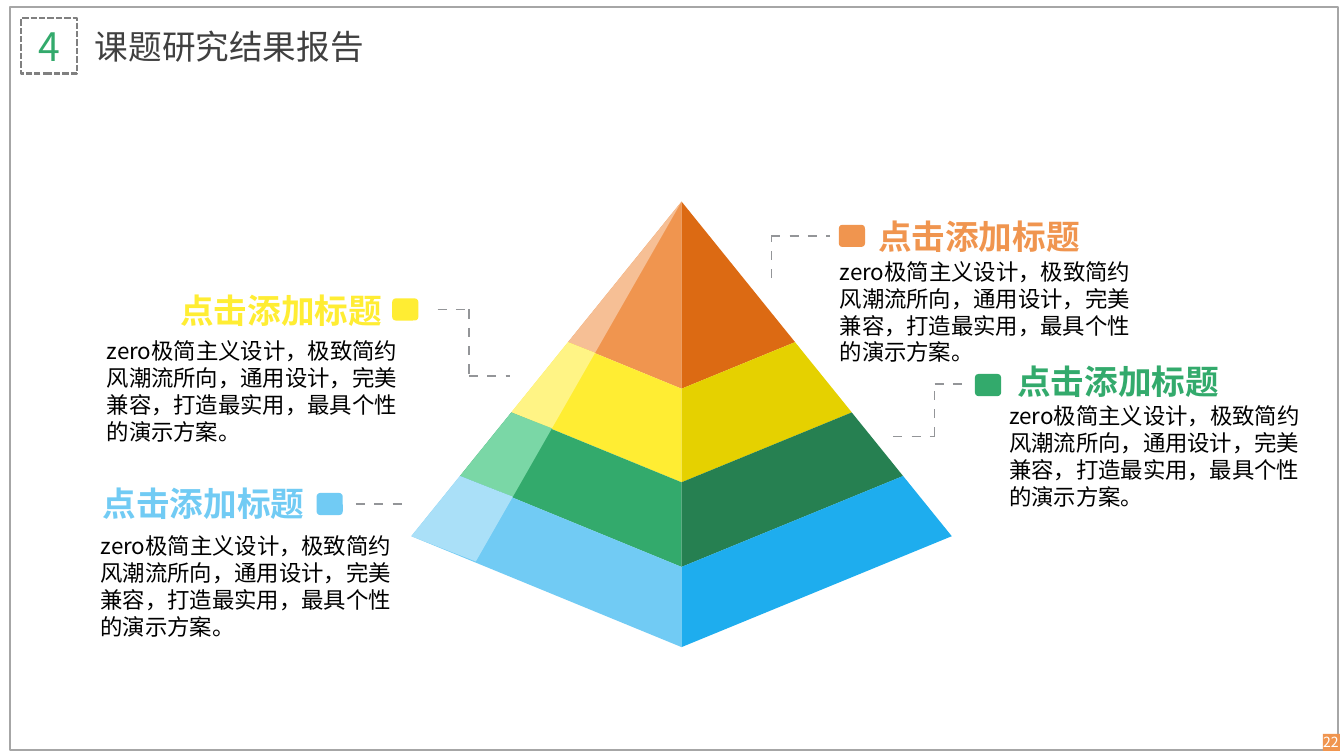
from dataclasses import dataclass
from itertools import pairwise

from lxml.etree import SubElement
from pptx import Presentation
from pptx.dml.color import RGBColor
from pptx.enum.dml import MSO_LINE
from pptx.enum.shapes import MSO_CONNECTOR, MSO_SHAPE as Kind
from pptx.enum.text import MSO_ANCHOR, MSO_AUTO_SIZE, PP_ALIGN as Align
from pptx.oxml.ns import qn
from pptx.util import Inches, Pt


@dataclass(frozen=True)
class Theme:
    font: str = "Noto Sans CJK SC"
    head_font: str = "League Spartan"
    number: int = 28
    title: int = 24
    body: int = 16
    page: int = 10
    ink: str = "000000"
    dark: str = "404040"
    frame: str = "A6A6A6"
    box: str = "808080"
    lead: str = "939598"
    white: str = "FFFFFF"
    orange: str = "F0954F"
    yellow: str = "FFED33"
    green: str = "33AA6C"
    blue: str = "71CBF4"


T = Theme()
SIZE = (13.33, 7.5)
TITLE, NUMBER, PAGE = "课题研究结果报告", "4", "22"
HEAD = "点击添加标题"
BODY = "zero极简主义设计，极致简约风潮流所向，通用设计，完美兼容，打造最实用，最具个性的演示方案。"

# Each tier ends at a share of the way from the apex to the feet.
APEX = (6.76, 2.0)
LEFT, FRONT, RIGHT, GLINT = (4.08, 5.32), (6.76, 6.42), (9.44, 5.32), (4.72, 5.57)
TIERS = [  # end share, left face, right face, glint
    (0.42, T.orange, "DC6A13", "F6BF95"),
    (0.63, T.yellow, "E5D100", "FFF485"),
    (0.82, T.green, "268051", "7AD7A6"),
    (1.0, T.blue, "1EADEE", "AAE0F8"),
]
NOTES = [  # colour, swatch, heading, body, leader corners
    (T.orange, (8.32, 2.23), (8.61, 2.09), (8.23, 2.51),
     [(7.65, 2.76), (7.65, 2.34), (8.23, 2.34)]),
    (T.yellow, (3.89, 2.96), (1.69, 2.83), (0.96, 3.3),
     [(4.34, 3.07), (4.65, 3.07), (4.65, 3.73), (5.06, 3.73)]),
    (T.green, (9.67, 3.71), (9.99, 3.53), (9.91, 3.94),
     [(8.86, 4.33), (9.27, 4.33), (9.27, 3.81), (9.54, 3.81)]),
    (T.blue, (3.14, 4.89), (0.92, 4.74), (0.9, 5.23),
     [(3.53, 5.0), (3.99, 5.0)]),
]


def rgb(code):
    return RGBColor.from_string(code)


def paint(shape, fill=None, line=None, width=1):
    shape.shadow.inherit = False
    if fill:
        shape.fill.solid()
        shape.fill.fore_color.rgb = rgb(fill)
    else:
        shape.fill.background()
    if line:
        shape.line.color.rgb = rgb(line)
        shape.line.width = Pt(width)
    else:
        shape.line.fill.background()


def block(slide, kind, box, **style):
    shape = slide.shapes.add_shape(kind, *map(Inches, box))
    paint(shape, **style)
    return shape


def write(shape, text, size, color, align=Align.LEFT, font=T.font,
          bold=False, lead=None, anchor=MSO_ANCHOR.MIDDLE, wrap=True):
    frame = shape.text_frame
    frame.word_wrap = wrap
    frame.auto_size = MSO_AUTO_SIZE.NONE
    frame.vertical_anchor = anchor
    par = frame.paragraphs[0]
    par.text = text
    par.alignment = align
    if lead:
        par.line_spacing = Pt(size * lead)
    face = par.font
    face.name, face.size, face.bold = font, Pt(size), bold
    face.color.rgb = rgb(color)
    # East Asian letters take their own typeface entry.
    props = par._p.find(".//" + qn("a:defRPr"))
    SubElement(props, qn("a:ea"), typeface=T.font)


def label(slide, box, *words, **style):
    write(slide.shapes.add_textbox(*map(Inches, box)), *words, **style)


def along(foot, share):
    return tuple(Inches(a + (f - a) * share) for a, f in zip(APEX, foot))


def face(slide, feet, top, end, color):
    """Draw the part of a pyramid side between two shares of its height."""
    one, two = feet
    first, *rest = (along(one, top), along(one, end), along(two, end), along(two, top))
    build = slide.shapes.build_freeform(*first)
    build.add_line_segments(rest, close=True)
    paint(build.convert_to_shape(), fill=color)


def leader(slide, corners):
    for start, end in pairwise(corners):
        line = slide.shapes.add_connector(
            MSO_CONNECTOR.STRAIGHT, *map(Inches, start + end))
        line.line.color.rgb = rgb(T.lead)
        line.line.width = Pt(1)
        props = line._element.spPr
        dash = SubElement(props.find(qn("a:ln")), qn("a:custDash"))
        SubElement(dash, qn("a:ds"), d="660000", sp="660000")
        SubElement(props, qn("a:effectLst"))


def header(slide):
    block(slide, Kind.RECTANGLE, (0.1, 0.07, 13.17, 7.37), line=T.frame)
    box = block(slide, Kind.RECTANGLE, (0.21, 0.18, 0.55, 0.55), line=T.box, width=1.5)
    box.line.dash_style = MSO_LINE.SQUARE_DOT
    frame = box.text_frame
    frame.margin_left = frame.margin_right = frame.margin_top = frame.margin_bottom = 0
    write(box, NUMBER, T.number, T.green, Align.CENTER)
    title = slide.shapes.title
    title.left, title.top, title.width, title.height = map(Inches, (0.84, 0.18, 3.59, 0.55))
    write(title, TITLE, T.title, T.dark)
    block(slide, Kind.RECTANGLE, (13.12, 7.28, 0.17, 0.17), fill=T.orange)
    label(slide, (12.98, 7.28, 0.44, 0.17), PAGE, T.page, T.white, Align.CENTER)


def pyramid(slide):
    top = 0
    for end, left, right, glint in TIERS:
        for feet, color in (((LEFT, FRONT), left), ((FRONT, RIGHT), right),
                            ((LEFT, GLINT), glint)):
            face(slide, feet, top, end, color)
        top = end


def note(slide, color, swatch, head, body, corners):
    block(slide, Kind.ROUNDED_RECTANGLE, (*swatch, 0.26, 0.22), fill=color)
    leader(slide, corners)
    label(slide, (*head, 2.22, 0.5), HEAD, T.title, color, font=T.head_font,
          bold=True, lead=1.2, anchor=MSO_ANCHOR.TOP, wrap=False)
    label(slide, (*body, 3.18, 1.18), BODY, T.body, T.ink, lead=1.2,
          anchor=MSO_ANCHOR.TOP)


def main():
    deck = Presentation()
    deck.slide_width, deck.slide_height = map(Inches, SIZE)
    slide = deck.slides.add_slide(deck.slide_layouts[5])
    header(slide)
    pyramid(slide)
    for item in NOTES:
        note(slide, *item)
    deck.save("out.pptx")


if __name__ == "__main__":
    main()
